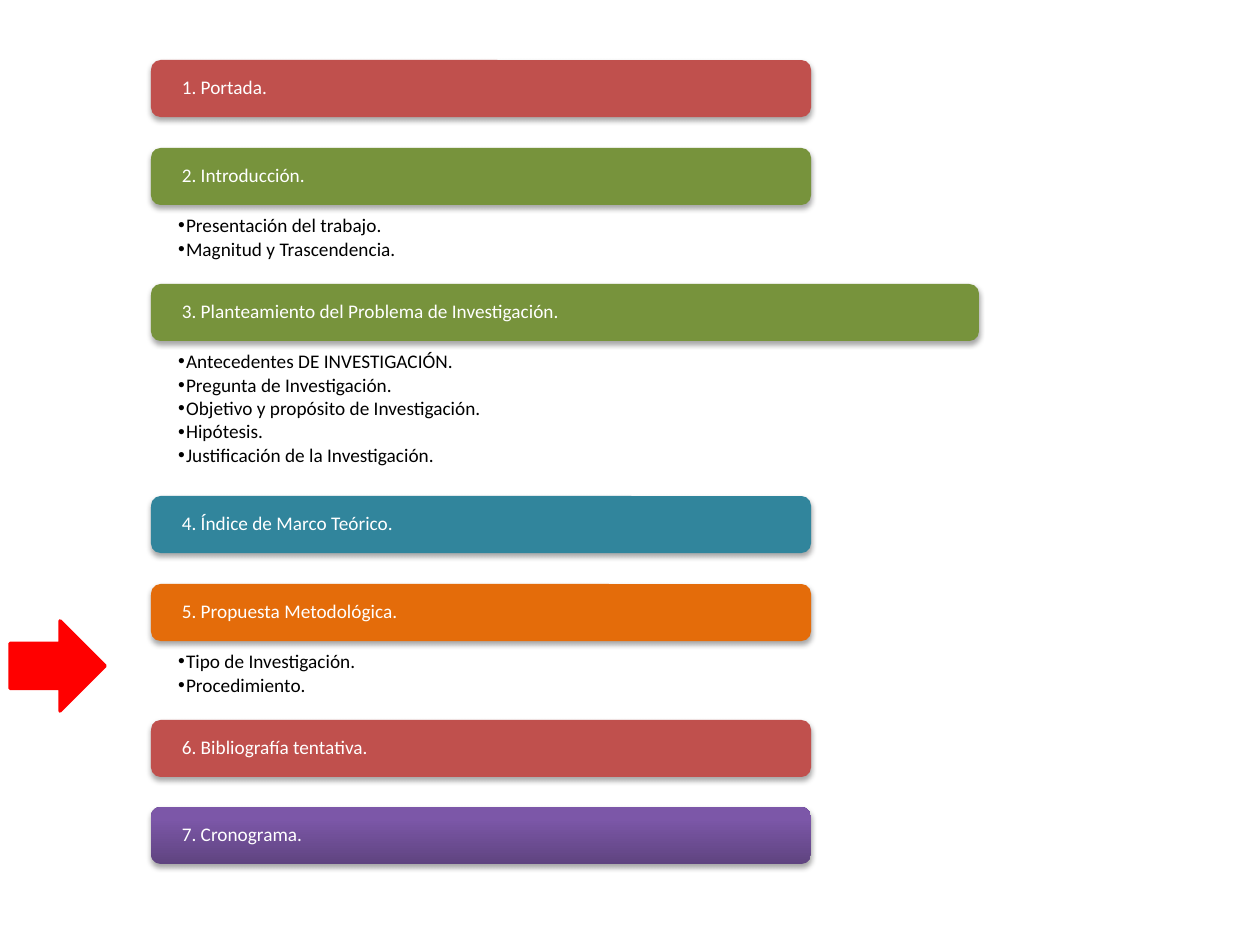
from lxml import etree
from pptx import Presentation
from pptx import util as u
from pptx.dml.color import RGBColor
from pptx.enum import shapes, text
from pptx.oxml import ns

PX = 914400 / 126
COLORS = {
    "red": "C0504D", "green": "77933C", "teal": "31859C", "orange": "E46C0A",
    "purple_dark": "5F4480", "purple": "7C57A8",
    "arrow": "FF0000", "white": "FFFFFF", "black": "000000",
}
SECTIONS = [
    ("1. Portada.", 60, 660, "red", []),
    ("2. Introducción.", 148, 660, "green",
     ["Presentación del trabajo.", "Magnitud y Trascendencia."]),
    ("3. Planteamiento del Problema de Investigación.", 284, 828, "green",
     ["Antecedentes DE INVESTIGACIÓN.", "Pregunta de Investigación.",
      "Objetivo y propósito de Investigación.", "Hipótesis.",
      "Justificación de la Investigación."]),
    ("4. Índice de Marco Teórico.", 496, 660, "teal", []),
    ("5. Propuesta Metodológica.", 584, 660, "orange",
     ["Tipo de Investigación.", "Procedimiento."]),
    ("6. Bibliografía tentativa.", 720, 660, "red", []),
    ("7. Cronograma.", 807, 660, "purple", []),
]


def px(*values):
    return [u.Emu(round(v * PX)) for v in values]


def set_text(sp, content, color, insets, anchor, after):
    tf = sp.text_frame
    tf.text = content
    tf.word_wrap = True
    tf.auto_size = text.MSO_AUTO_SIZE.NONE
    tf.vertical_anchor = anchor
    tf.margin_left, tf.margin_top, tf.margin_right, tf.margin_bottom = px(*insets)
    for p in tf.paragraphs:
        p.alignment = text.PP_ALIGN.LEFT
        p.line_spacing = 0.9
        p.space_before = u.Pt(0)
        p.space_after = u.Pt(after)
        for r in p.runs:
            r.font.name = "Calibri"
            r.font.size = u.Pt(11)
            r.font.bold = False
            r.font.color.rgb = RGBColor.from_string(COLORS[color])
    return tf


prs = Presentation()
prs.slide_width, prs.slide_height = px(1260, 945)
s = prs.slides.add_slide(prs.slide_layouts.get_by_name("Comparison"))
bodies = [sp for sp in s.placeholders if sp.placeholder_format.idx in (1, 2, 4)]
for sp in list(s.placeholders):
    if sp.placeholder_format.idx in (0, 3):
        sp.element.getparent().remove(sp.element)

for title, top, width, color, items in SECTIONS:
    if items:
        sp = bodies.pop(0)
        sp.left, sp.top, sp.width, sp.height = px(105, top + 28, 942, 47 + 25 * len(items))
        tf = set_text(sp, "\n".join(items), "black", (73, 40, 73, 11),
                      text.MSO_ANCHOR.TOP, 1.5)
        for p in tf.paragraphs:
            p.level = 1
            pPr = p._p.get_or_add_pPr()
            indent = px(8)[0]
            pPr.set("marL", str(indent))
            pPr.set("indent", str(-indent))
            etree.SubElement(pPr, ns.qn("a:buFont")).set("typeface", "Arial")
            etree.SubElement(pPr, ns.qn("a:buChar")).set("char", "•")

    sp = s.shapes.add_shape(shapes.MSO_SHAPE.ROUNDED_RECTANGLE, *px(151, top, width, 57))
    if color == "purple":
        sp.fill.gradient()
        sp.fill.gradient_angle = 90
        for stop, name, position in zip(sp.fill.gradient_stops,
                                        ("purple_dark", "purple"), (0, 0.8)):
            stop.color.rgb = RGBColor.from_string(COLORS[name])
            stop.position = position
    else:
        sp.fill.solid()
        sp.fill.fore_color.rgb = RGBColor.from_string(COLORS[color])
    sp.line.fill.background()
    sp.shadow.inherit = False
    effects = sp.element.spPr.find(ns.qn("a:effectLst"))
    shadow = etree.SubElement(effects, ns.qn("a:outerShdw"), blurRad="40000",
                              dist="23000", dir="5400000", rotWithShape="0")
    shade = etree.SubElement(shadow, ns.qn("a:srgbClr"), val=COLORS["black"])
    etree.SubElement(shade, ns.qn("a:alpha"), val="35000")
    set_text(sp, title, "white", (28, 0, 28, 0), text.MSO_ANCHOR.MIDDLE, 0)

sp = s.shapes.add_shape(shapes.MSO_SHAPE.RIGHT_ARROW, *px(10, 621, 95, 90))
sp.shadow.inherit = False
sp.fill.solid()
sp.fill.fore_color.rgb = RGBColor.from_string(COLORS["arrow"])
sp.line.color.rgb = RGBColor.from_string(COLORS["arrow"])
sp.line.width = u.Pt(2)

prs.save("out.pptx")
